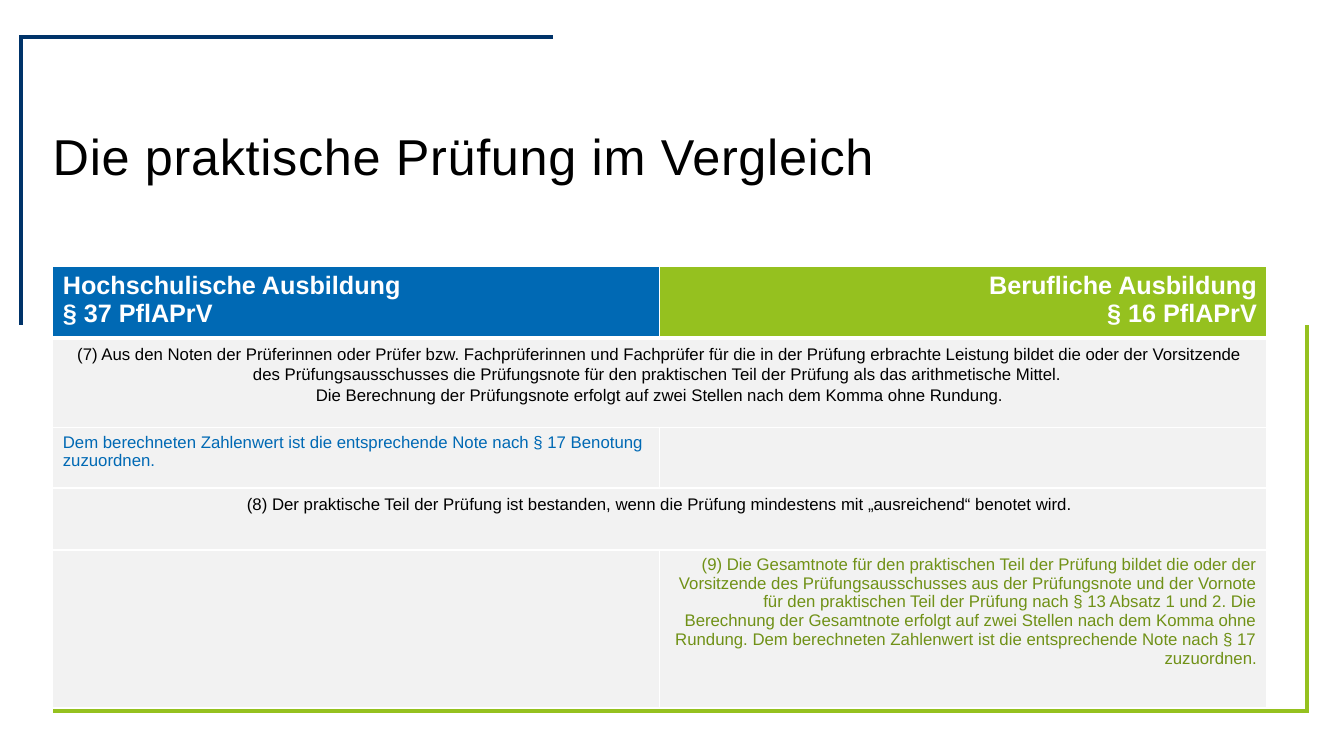
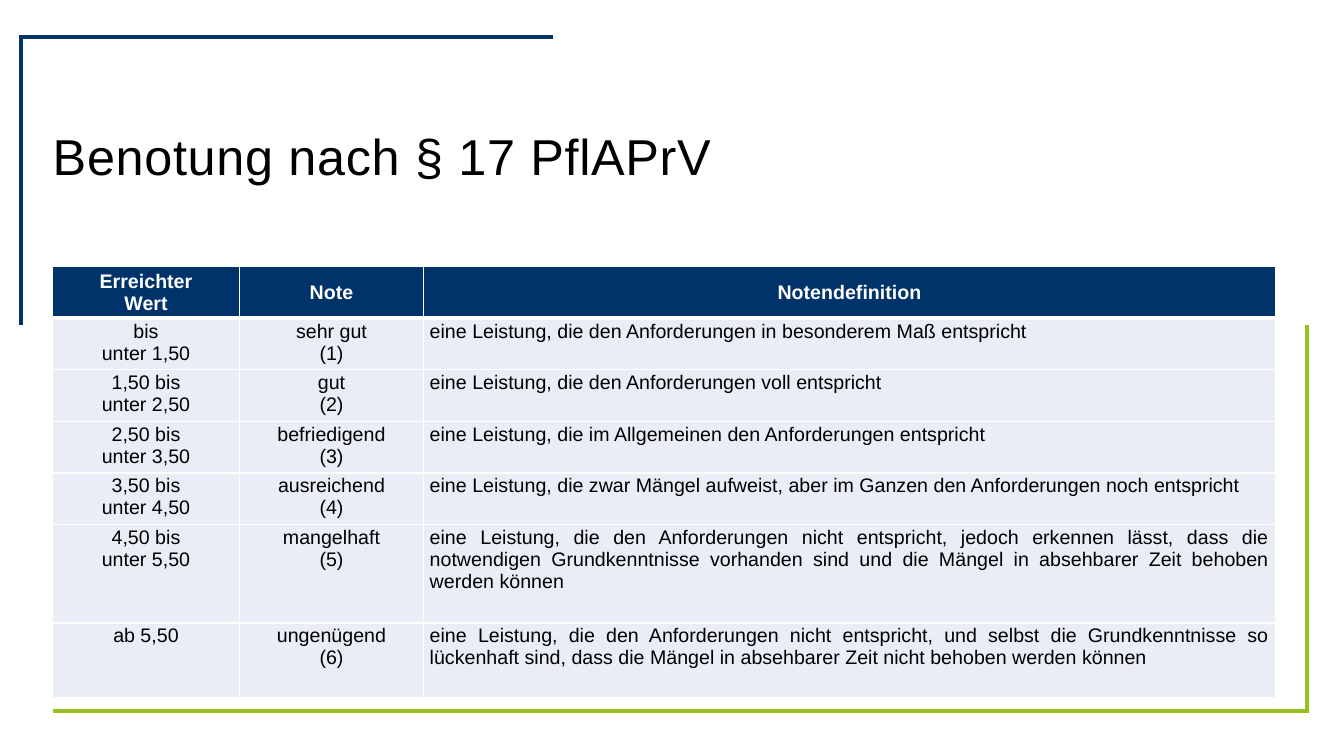
from lxml import etree
from pptx import Presentation
from pptx.dml.color import RGBColor
from pptx.enum.text import MSO_ANCHOR, PP_ALIGN
from pptx.oxml.ns import qn
from pptx.util import Cm, Pt

LEFT, RIGHT, CENTER, JUSTIFY = (
    PP_ALIGN.LEFT, PP_ALIGN.RIGHT, PP_ALIGN.CENTER, PP_ALIGN.JUSTIFY)
TOP, MIDDLE = MSO_ANCHOR.TOP, MSO_ANCHOR.MIDDLE

FONT = "Arial"
BLACK = RGBColor(0x00, 0x00, 0x00)
WHITE = RGBColor(0xFF, 0xFF, 0xFF)
NAVY = RGBColor(0x00, 0x33, 0x69)
BLUE = RGBColor(0x00, 0x69, 0xB4)
GREEN = RGBColor(0x95, 0xC1, 0x1F)
OLIVE = RGBColor(0x70, 0x91, 0x17)
GRAY = RGBColor(0xF2, 0xF2, 0xF2)
PALE = RGBColor(0xE9, 0xEE, 0xF6)

MARGIN = 1.33
WIDTH = 30.81
TABLE_TOP = 6.72

# The corner brackets are edges of a table without fill.
PLAIN_STYLE = "{2D5ABB26-0587-4C30-8999-92F81FD0307C}"
FRAME_LEFT, FRAME_TOP = 0.53, 0.93
FRAME_COLS = [0.81, 12.59, 19]
FRAME_HEIGHTS = [7.26, 9.72]
FRAME_SPANS = [((0, 0), (0, 1)), ((1, 1), (1, 2))]
FRAME_EDGES = [
    (0, 0, NAVY, "LT"), (0, 1, NAVY, "T"),
    (1, 1, GREEN, "RB"), (1, 2, GREEN, "RB"),
]

# A row with a single text spans both columns.
EXAM_TITLE = "Die praktische Prüfung im Vergleich"
EXAM_COLS = [15.3, 15.3]
EXAM_HEIGHTS = [1.8, 2.26, 1.52, 1.56, 3.96]
EXAM_ROWS = [
    ("Hochschulische Ausbildung\n§ 37 PflAPrV",
     "Berufliche Ausbildung\n§ 16 PflAPrV"),
    ("(7) Aus den Noten der Prüferinnen oder Prüfer bzw. Fachprüferinnen und "
     "Fachprüfer für die in der Prüfung erbrachte Leistung bildet die oder der "
     "Vorsitzende des Prüfungsausschusses die Prüfungsnote für den praktischen "
     "Teil der Prüfung als das arithmetische Mittel. \n"
     "Die Berechnung der Prüfungsnote erfolgt auf zwei Stellen nach dem Komma "
     "ohne Rundung.",),
    ("Dem berechneten Zahlenwert ist die entsprechende Note nach § 17 Benotung "
     "zuzuordnen.", ""),
    ("(8) Der praktische Teil der Prüfung ist bestanden, wenn die Prüfung "
     "mindestens mit „ausreichend“ benotet wird.",),
    ("",
     "(9) Die Gesamtnote für den praktischen Teil der Prüfung bildet die oder "
     "der Vorsitzende des Prüfungsausschusses aus der Prüfungsnote und der "
     "Vornote für den praktischen Teil der Prüfung nach § 13 Absatz 1 und 2. "
     "Die Berechnung der Gesamtnote erfolgt auf zwei Stellen nach dem Komma "
     "ohne Rundung. Dem berechneten Zahlenwert ist die entsprechende Note nach "
     "§ 17 zuzuordnen."),
]

# Here \v breaks a line inside a paragraph.
GRADE_TITLE = "Benotung nach § 17 PflAPrV"
GRADE_COLS = [4.7, 4.65, 21.46]
GRADE_HEIGHTS = [1.3] * 5 + [2.48, 1.89]
GRADE_ROWS = [
    ("Erreichter\vWert", "Note", "Notendefinition"),
    ("bis\vunter 1,50", "sehr gut\v(1)",
     "eine Leistung, die den Anforderungen in besonderem Maß entspricht"),
    ("1,50 bis\vunter 2,50", "gut\v(2)",
     "eine Leistung, die den Anforderungen voll entspricht"),
    ("2,50 bis\vunter 3,50", "befriedigend\v(3)",
     "eine Leistung, die im Allgemeinen den Anforderungen entspricht"),
    ("3,50 bis\vunter 4,50", "ausreichend\v(4)",
     "eine Leistung, die zwar Mängel aufweist, aber im Ganzen den "
     "Anforderungen noch entspricht"),
    ("4,50 bis\vunter 5,50", "mangelhaft\v(5)",
     "eine Leistung, die den Anforderungen nicht entspricht, jedoch erkennen "
     "lässt, dass die notwendigen Grundkenntnisse vorhanden sind und die Mängel "
     "in absehbarer Zeit behoben werden können"),
    ("ab 5,50", "ungenügend\v(6)",
     "eine Leistung, die den Anforderungen nicht entspricht, und selbst die "
     "Grundkenntnisse so lückenhaft sind, dass die Mängel in absehbarer Zeit "
     "nicht behoben werden können"),
]


def write(frame, text, size, color, align=LEFT, bold=False, spacing=1.0):
    frame.text = text
    for para in frame.paragraphs:
        para.alignment = align
        para.line_spacing = spacing
        for run in para.runs:
            font = run.font
            font.name, font.size, font.bold = FONT, Pt(size), bold
            font.color.rgb = color


def set_edges(cell, color, widths):
    """Draw cell borders; widths maps L, R, T, B, in that order, to points."""
    props = cell._tc.get_or_add_tcPr()
    for side, width in widths.items():
        edge = etree.SubElement(props, qn("a:ln" + side), w=str(Pt(width)))
        fill = etree.SubElement(edge, qn("a:solidFill"))
        etree.SubElement(fill, qn("a:srgbClr"), val=str(color))


def add_table(slide, left, top, cols, heights):
    shape = slide.shapes.add_table(
        len(heights), len(cols), Cm(left), Cm(top),
        Cm(sum(cols)), Cm(sum(heights)))
    table = shape.table
    table.horz_banding = False
    for col, width in zip(table.columns, cols):
        col.width = Cm(width)
    for row, height in zip(table.rows, heights):
        row.height = Cm(height)
    return table


def add_frame(slide):
    table = add_table(slide, FRAME_LEFT, FRAME_TOP, FRAME_COLS, FRAME_HEIGHTS)
    table.first_row = False
    table._tbl.tblPr.find(qn("a:tableStyleId")).text = PLAIN_STYLE
    for first, last in FRAME_SPANS:
        table.cell(*first).merge(table.cell(*last))
    for r, c, color, sides in FRAME_EDGES:
        set_edges(table.cell(r, c), color, dict.fromkeys(sides, 3))


def add_page(deck, title):
    """Add a slide with the corner brackets and its title."""
    slide = deck.slides.add_slide(deck.slide_layouts[6])
    add_frame(slide)
    box = slide.shapes.add_textbox(Cm(MARGIN), Cm(3.33), Cm(WIDTH), Cm(1.65))
    frame = box.text_frame
    frame.word_wrap = True
    frame.vertical_anchor = TOP
    frame.margin_left = frame.margin_right = 0
    frame.margin_top = frame.margin_bottom = 0
    write(frame, title, 36, BLACK, spacing=0.9)
    run = frame.paragraphs[0].runs[0]
    run.font._element.set("spc", "50")
    return slide


def add_grid(slide, cols, heights, heads, body):
    """Add a table with one fill per head cell and one for the body."""
    table = add_table(slide, MARGIN, TABLE_TOP, cols, heights)
    for r in range(len(heights)):
        for c, head in enumerate(heads):
            cell = table.cell(r, c)
            set_edges(cell, WHITE, {"L": 1, "R": 1, "T": 3 if r == 1 else 1,
                                    "B": 3 if r == 0 else 1})
            cell.fill.solid()
            cell.fill.fore_color.rgb = body if r else head
    return table


def add_exam(deck):
    slide = add_page(deck, EXAM_TITLE)
    table = add_grid(slide, EXAM_COLS, EXAM_HEIGHTS, [BLUE, GREEN], GRAY)
    sides = [(BLUE, LEFT), (OLIVE, RIGHT)]
    for r, texts in enumerate(EXAM_ROWS):
        if len(texts) == 1:
            cell = table.cell(r, 0)
            cell.merge(table.cell(r, 1))
            write(cell.text_frame, texts[0], 12, BLACK, CENTER, spacing=1.1)
            continue
        for c, (text, (color, align)) in enumerate(zip(texts, sides)):
            frame = table.cell(r, c).text_frame
            if r == 0:
                write(frame, text, 18, WHITE, align, bold=True)
            elif text:
                write(frame, text, 12, color, align)


def add_grades(deck):
    slide = add_page(deck, GRADE_TITLE)
    table = add_grid(slide, GRADE_COLS, GRADE_HEIGHTS, [NAVY] * 3, PALE)
    for r, texts in enumerate(GRADE_ROWS):
        head = r == 0
        for c, text in enumerate(texts):
            cell = table.cell(r, c)
            cell.margin_left = cell.margin_right = Cm(0.15)
            cell.margin_top = cell.margin_bottom = Cm(0.05)
            cell.vertical_anchor = MIDDLE if head else TOP
            align = JUSTIFY if c == 2 and not head else CENTER
            write(cell.text_frame, text, 14, WHITE if head else BLACK,
                  align, bold=head)


def main():
    deck = Presentation()
    deck.slide_width, deck.slide_height = Cm(33.87), Cm(19.05)
    add_exam(deck)
    add_grades(deck)
    deck.save("out.pptx")


if __name__ == "__main__":
    main()
